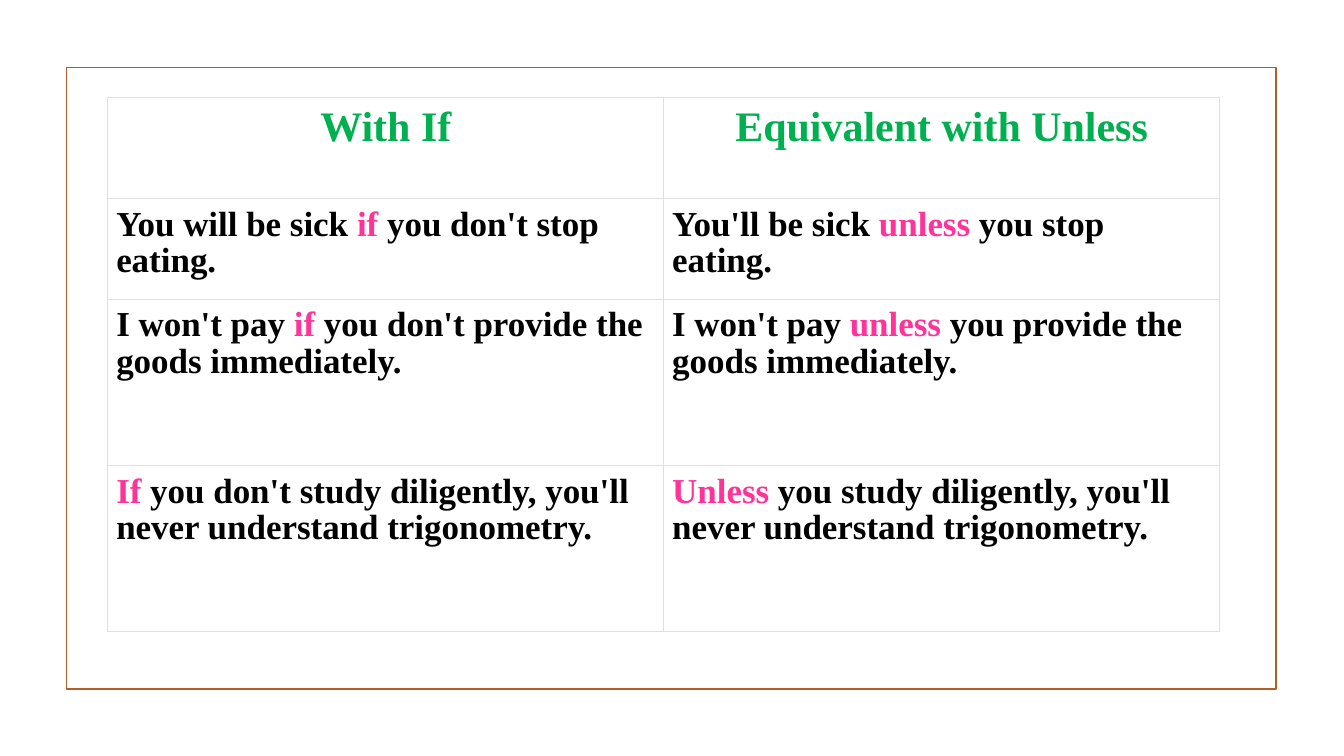
from lxml.etree import SubElement
from pptx import Presentation
from pptx.dml.color import RGBColor
from pptx.enum.shapes import MSO_SHAPE as Shape
from pptx.enum.text import PP_ALIGN as Align
from pptx.oxml.ns import qn
from pptx.util import Cm, Pt

COLORS = {
    "frame": "B15E28",
    "border": "DFDFDF",
    "white": "FFFFFF",
    "header": "00B050",
    "text": "000000",
    "keyword": "FF3399",
}

HEADERS = ["With If", "Equivalent with Unless"]
EXAMPLES = [
    [("You will be sick ", "if", " you don't stop eating."),
     ("You'll be sick ", "unless", " you stop eating.")],
    [("I won't pay ", "if", " you don't provide the goods immediately."),
     ("I won't pay ", "unless", " you provide the goods immediately.")],
    [("", "If", " you don't study diligently, you'll never understand trigonometry."),
     ("", "Unless", " you study diligently, you'll never understand trigonometry.")],
]
COLUMN_WIDTH = 14.01
ROW_HEIGHTS = [2.54, 2.54, 4.19, 4.19]


class SlideBuilder:
    font_name = "Times New Roman"
    header_size = 30
    body_size = 25
    line_spacing = 0.95
    cell_margin = Cm(0.21)

    def __init__(self, slide):
        self.slide = slide

    def color(self, name):
        return RGBColor.from_string(COLORS[name])

    def frame(self, left, top, width, height):
        shape = self.slide.shapes.add_shape(
            Shape.RECTANGLE, Cm(left), Cm(top), Cm(width), Cm(height))
        shape.shadow.inherit = False
        shape.fill.background()
        shape.line.color.rgb = self.color("frame")
        shape.line.width = Pt(1.25)

    def table(self, left, top, column_width, row_heights, column_count):
        table = self.slide.shapes.add_table(
            len(row_heights), column_count, Cm(left), Cm(top),
            Cm(column_width * column_count), Cm(sum(row_heights))).table
        table.first_row = False
        table.horz_banding = False
        for column in table.columns:
            column.width = Cm(column_width)
        for row, height in zip(table.rows, row_heights):
            row.height = Cm(height)
        for cell in table.iter_cells():
            self.style_cell(cell)
        return table

    def style_cell(self, cell):
        cell.margin_left = cell.margin_right = self.cell_margin
        cell.margin_top = cell.margin_bottom = self.cell_margin
        properties = cell._tc.get_or_add_tcPr()
        for side in ("lnL", "lnR", "lnT", "lnB"):
            line = SubElement(properties, qn(f"a:{side}"), w=str(Pt(0.75)))
            fill = SubElement(line, qn("a:solidFill"))
            SubElement(fill, qn("a:srgbClr"), val=COLORS["border"])
        cell.fill.solid()
        cell.fill.fore_color.rgb = self.color("white")

    def cell_text(self, cell, runs, size, alignment=Align.LEFT):
        paragraph = cell.text_frame.paragraphs[0]
        paragraph.alignment = alignment
        paragraph.line_spacing = self.line_spacing
        for text, color_name in runs:
            if text:
                run = paragraph.add_run()
                run.text = text
                run.font.name = self.font_name
                run.font.size = Pt(size)
                run.font.bold = True
                run.font.color.rgb = self.color(color_name)


def main():
    presentation = Presentation()
    presentation.slide_width = Cm(33.87)
    presentation.slide_height = Cm(19.05)
    builder = SlideBuilder(presentation.slides.add_slide(presentation.slide_layouts[6]))

    builder.frame(1.68, 1.7, 30.48, 15.67)
    table = builder.table(2.72, 2.46, COLUMN_WIDTH, ROW_HEIGHTS, len(HEADERS))
    for column, header in enumerate(HEADERS):
        builder.cell_text(table.cell(0, column), [(header, "header")],
                          builder.header_size, Align.CENTER)
    for row, sentences in enumerate(EXAMPLES, start=1):
        for column, parts in enumerate(sentences):
            runs = zip(parts, ("text", "keyword", "text"))
            builder.cell_text(table.cell(row, column), runs, builder.body_size)

    presentation.save("out.pptx")


if __name__ == "__main__":
    main()
